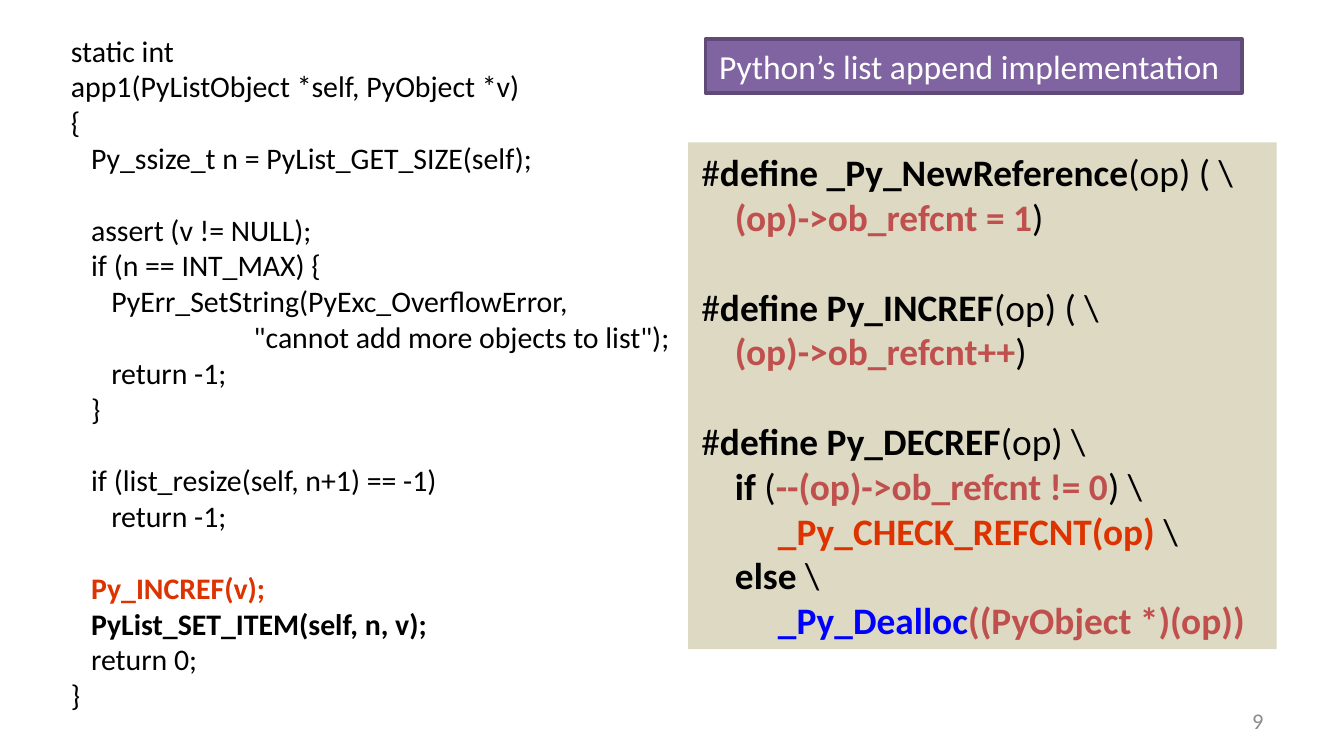
from pptx import Presentation
from pptx import util as u
from pptx.dml.color import RGBColor
from pptx.enum import shapes, text

THEME = {
    "font": "Calibri",
    "size": {"title": 18, "code": 16, "macro": 20, "number": 12},
    "color": {"ink": "000000", "white": "FFFFFF", "grey": "8C8C8C",
              "purple": "8064A2", "purple_edge": "5F4A78", "sand": "DDD9C3",
              "red": "C0504D", "orange": "DD3300", "blue": "0000FF"},
}
LINE_HEIGHT = 1.2
# run style: (colour name, bold)
PLAIN, BOLD = ("ink", False), ("ink", True)
RED, ORANGE, BLUE = ("red", True), ("orange", True), ("blue", True)
WHITE, GREY = ("white", False), ("grey", False)


def rgb(name):
    return RGBColor.from_string(THEME["color"][name])


def write_lines(frame, lines, size, align=text.PP_ALIGN.LEFT):
    """Fill frame with (indent in inches, blank lines before, runs) entries."""
    for i, (indent, gap, runs) in enumerate(lines):
        line = frame.paragraphs[0] if i == 0 else frame.add_paragraph()
        line.alignment = align
        line.space_before = u.Pt(gap * size * LINE_HEIGHT)
        if indent:
            line._p.get_or_add_pPr().set("marL", str(u.Inches(indent)))
        for words, (color, bold) in runs:
            run = line.add_run()
            run.text = words
            font = {"name": THEME["font"], "size": u.Pt(size), "bold": bold}
            for key, value in font.items():
                setattr(run.font, key, value)
            run.font.color.rgb = rgb(color)


STEP = 0.15
app1_lines = [
    (0, 0, [("static int", PLAIN)]),
    (0, 0, [("app1(PyListObject *self, PyObject *v)", PLAIN)]),
    (0, 0, [("{", PLAIN)]),
    (STEP, 0, [("Py_ssize_t n = PyList_GET_SIZE(self);", PLAIN)]),
    (STEP, 1, [("assert (v != NULL);", PLAIN)]),
    (STEP, 0, [("if (n == INT_MAX) {", PLAIN)]),
    (2 * STEP, 0, [("PyErr_SetString(PyExc_OverflowError,", PLAIN)]),
    (1.36, 0, [('"cannot add more objects to list");', PLAIN)]),
    (2 * STEP, 0, [("return -1;", PLAIN)]),
    (STEP, 0, [("}", PLAIN)]),
    (STEP, 1, [("if (list_resize(self, n+1) == -1)", PLAIN)]),
    (2 * STEP, 0, [("return -1;", PLAIN)]),
    (STEP, 1, [("Py_INCREF(v);", ORANGE)]),
    (STEP, 0, [("PyList_SET_ITEM(self, n, v);", BOLD)]),
    (STEP, 0, [("return 0;", PLAIN)]),
    (0, 0, [("}", PLAIN)]),
]

BODY, BRANCH = 0.25, 0.57
macro_lines = [
    (0, 0, [("#", PLAIN), ("define _Py_NewReference", BOLD), ("(op) ( \\", PLAIN)]),
    (BODY, 0, [("(op)->ob_refcnt = 1", RED), (")", PLAIN)]),
    (0, 1, [("#", PLAIN), ("define Py_INCREF", BOLD), ("(op) ( \\", PLAIN)]),
    (BODY, 0, [("(op)->ob_refcnt++", RED), (")", PLAIN)]),
    (0, 1, [("#", PLAIN), ("define Py_DECREF", BOLD), ("(op) \\", PLAIN)]),
    (BODY, 0, [("if", BOLD), (" (", PLAIN), ("--(op)->ob_refcnt != 0", RED),
               (") \\", PLAIN)]),
    (BRANCH, 0, [("_Py_CHECK_REFCNT(op)", ORANGE), (" \\", PLAIN)]),
    (BODY, 0, [("else", BOLD), (" \\", PLAIN)]),
    (BRANCH, 0, [("_Py_Dealloc", BLUE), ("((PyObject *)(op))", RED)]),
]

deck = Presentation()
deck.slide_width = u.Inches(10)
deck.slide_height = deck.slide_width * 9 // 16
slide = deck.slides.add_slide(deck.slide_layouts[5])

# Title banner
title = slide.shapes.title
place = {"left": 5.25, "top": 0.29, "width": 3.99, "height": 0.4}
for side, inches in place.items():
    setattr(title, side, u.Inches(inches))
title.fill.solid()
title.fill.fore_color.rgb = rgb("purple")
title.line.color.rgb = rgb("purple_edge")
title.line.width = u.Pt(2)
write_lines(title.text_frame, [(0, 0, [("Python’s list append implementation", WHITE)])],
            THEME["size"]["title"])

# Function listing, macro panel and page number
app1 = slide.shapes.add_textbox(
    u.Inches(0.43), u.Inches(0.19), u.Inches(5.13), u.Inches(5.22))
write_lines(app1.text_frame, app1_lines, THEME["size"]["code"])

macros = slide.shapes.add_shape(
    shapes.MSO_SHAPE.RECTANGLE,
    u.Inches(5.12), u.Inches(1.06), u.Inches(4.38), u.Inches(3.77))
macros.shadow.inherit = False
macros.fill.solid()
macros.fill.fore_color.rgb = rgb("sand")
macros.line.fill.background()
write_lines(macros.text_frame, macro_lines, THEME["size"]["macro"])

page_number = slide.shapes.add_textbox(
    u.Inches(7.17), u.Inches(5.21), u.Inches(2.33), u.Inches(0.3))
write_lines(page_number.text_frame, [(0, 0, [("9", GREY)])],
            THEME["size"]["number"], text.PP_ALIGN.RIGHT)

top, middle = text.MSO_ANCHOR.TOP, text.MSO_ANCHOR.MIDDLE
for part, anchor, wrap in [(title, top, False), (app1, top, True),
                           (macros, middle, True), (page_number, middle, True)]:
    frame_format = {"vertical_anchor": anchor, "word_wrap": wrap,
                    "auto_size": text.MSO_AUTO_SIZE.NONE}
    for key, value in frame_format.items():
        setattr(part.text_frame, key, value)

deck.save("out.pptx")
